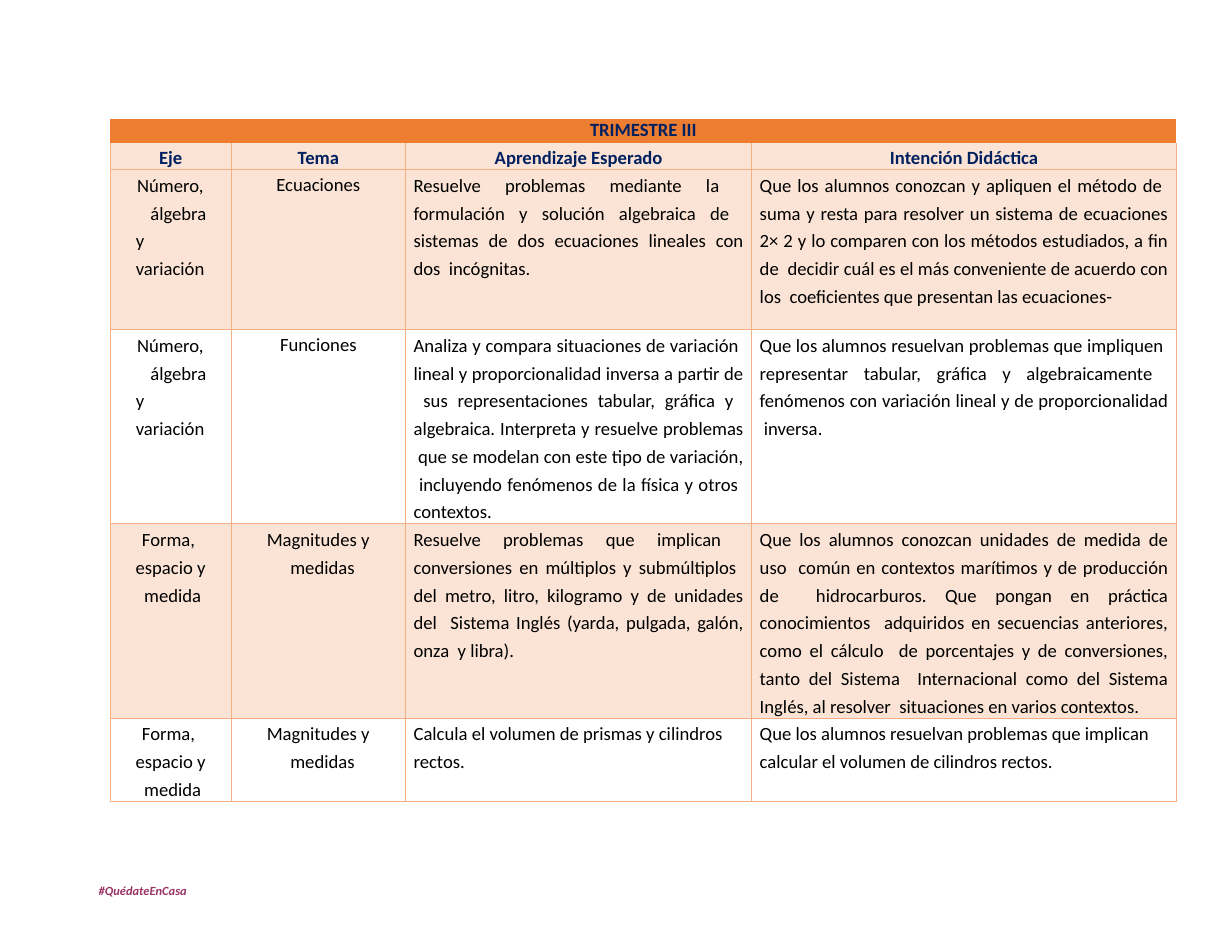
from lxml import etree
from pptx import Presentation
from pptx.dml.color import RGBColor
from pptx.enum.text import PP_ALIGN as Align
from pptx.oxml.ns import qn
from pptx.util import Cm, Pt

NAVY, BLACK, PLUM = "002060", "000000", "993366"
ORANGE, PEACH, BORDER = "ED7D31", "FBE4D5", "F4B083"
NO_STYLE = "{2D5ABB26-0587-4C30-8999-92F81FD0307C}"


def add_run(para, text, size, color, bold=False, italic=False, face="Calibri"):
    span = para.add_run()
    span.text = text
    font = span.font
    font.name, font.size, font.bold, font.italic = face, Pt(size), bold, italic
    font.color.rgb = RGBColor.from_string(color)


def add_borders(cell, sides):
    properties = cell._tc.get_or_add_tcPr()
    for index, side in enumerate(sides):
        line = etree.Element(qn(f"a:ln{side}"), w=str(Pt(0.75)))
        fill = etree.SubElement(line, qn("a:solidFill"))
        etree.SubElement(fill, qn("a:srgbClr"), val=BORDER)
        properties.insert(index, line)


centered = (Align.CENTER, 0, 0, 0, 1.18)
heading = (Align.CENTER, 0, 0, 0, 1.16)
axis_justified = (Align.JUSTIFY, 0.58, 0.03, 0.56, 1.22)
axis_centered = (Align.CENTER, 0.56, 0, 0.56, 1.22)
hanging = (Align.LEFT, 1.25, -0.44, 0.8, 1.22)
justified = (Align.JUSTIFY, 0.18, 0, 0.18, 1.22)
left = (Align.LEFT, 0.18, 0, 0.18, 1.22)

number_axis = "Número,  álgebra y  variación"
shape_axis = "Forma,  espacio y  medida"
measures = "Magnitudes y  medidas"

rows = [
    (["TRIMESTRE III"], [(Align.CENTER, 0, 0, 0, 1)]),
    (["Eje", "Tema", "Aprendizaje Esperado", "Intención Didáctica"], [heading] * 4),
    ([number_axis, "Ecuaciones",
      "Resuelve problemas mediante la  formulación y solución algebraica de  "
      "sistemas de dos ecuaciones lineales con dos  incógnitas.",
      "Que los alumnos conozcan y apliquen el método de  suma y resta para resolver "
      "un sistema de ecuaciones 2× 2 y lo comparen con los métodos estudiados, a fin "
      "de  decidir cuál es el más conveniente de acuerdo con los  coeficientes que "
      "presentan las ecuaciones-"],
     [axis_justified, centered, justified, justified]),
    ([number_axis, "Funciones",
      "Analiza y compara situaciones de variación  lineal y proporcionalidad inversa "
      "a partir de  sus representaciones tabular, gráfica y  algebraica. Interpreta y "
      "resuelve problemas  que se modelan con este tipo de variación,  incluyendo "
      "fenómenos de la física y otros  contextos.",
      "Que los alumnos resuelvan problemas que impliquen  representar tabular, gráfica "
      "y algebraicamente  fenómenos con variación lineal y de proporcionalidad  inversa"],
     [axis_justified, centered, justified, justified]),
    ([shape_axis, measures,
      "Resuelve problemas que implican  conversiones en múltiplos y submúltiplos  del "
      "metro, litro, kilogramo y de unidades del  Sistema Inglés (yarda, pulgada, "
      "galón, onza  y libra).",
      "Que los alumnos conozcan unidades de medida de uso  común en contextos marítimos "
      "y de producción de  hidrocarburos. Que pongan en práctica conocimientos  "
      "adquiridos en secuencias anteriores, como el cálculo  de porcentajes y de "
      "conversiones, tanto del Sistema  Internacional como del Sistema Inglés, al "
      "resolver  situaciones en varios contextos."],
     [axis_centered, hanging, justified, justified]),
    ([shape_axis, measures,
      "Calcula el volumen de prismas y cilindros  rectos.",
      "Que los alumnos resuelvan problemas que implican  calcular el volumen de "
      "cilindros rectos."],
     [axis_centered, hanging, left, left]),
]
fills = [ORANGE, PEACH, PEACH, None, PEACH, None]
widths = [2.74, 3.96, 7.85, 9.63]
heights = [0.56, 0.53, 3.63, 4.17, 4.14, 1.57]

deck = Presentation()
deck.slide_width, deck.slide_height = Cm(27.94), Cm(21.59)
page = deck.slides.add_slide(deck.slide_layouts[6])

frame = page.shapes.add_table(len(rows), len(widths), Cm(2.5), Cm(2.69),
                              Cm(sum(widths)), Cm(sum(heights)))
table = frame.table
table.first_row = table.horz_banding = False
table._tbl.tblPr.find(qn("a:tableStyleId")).text = NO_STYLE
for column, width in zip(table.columns, widths):
    column.width = Cm(width)
for row, height in zip(table.rows, heights):
    row.height = Cm(height)
table.cell(0, 0).merge(table.cell(0, 3))

for row_index, (texts, formats) in enumerate(rows):
    is_heading = row_index < 2
    for column_index in range(len(widths)):
        cell = table.cell(row_index, column_index)
        cell.margin_left = cell.margin_right = cell.margin_top = cell.margin_bottom = 0
        if fills[row_index]:
            cell.fill.solid()
            cell.fill.fore_color.rgb = RGBColor.from_string(fills[row_index])
        else:
            cell.fill.background()
        if row_index:
            add_borders(cell, "LRB" if row_index == 1 else "LRTB")
        if column_index >= len(texts):
            continue
        align, indent, first, right, spacing = formats[column_index]
        para = cell.text_frame.paragraphs[0]
        para.alignment, para.line_spacing = align, spacing
        settings = para._p.get_or_add_pPr()
        for name, length in (("marL", indent), ("marR", right), ("indent", first)):
            settings.set(name, str(Cm(length)))
        add_run(para, texts[column_index], 12, NAVY if is_heading else BLACK, is_heading)

inverse_para = table.cell(3, 3).text_frame.paragraphs[0]
add_run(inverse_para, ".", 12, BLACK, face="Arial")

box = page.shapes.add_textbox(Cm(2.21), Cm(19.99), Cm(2.06), Cm(0.41))
footer = box.text_frame
footer.margin_left = footer.margin_right = footer.margin_bottom = 0
footer.margin_top = Cm(0.03)
footer.word_wrap = True
para = footer.paragraphs[0]
para._p.get_or_add_pPr().set("marL", str(Cm(0.03)))
add_run(para, "#QuédateEnCasa", 8, PLUM, True, True)

deck.save("out.pptx")
